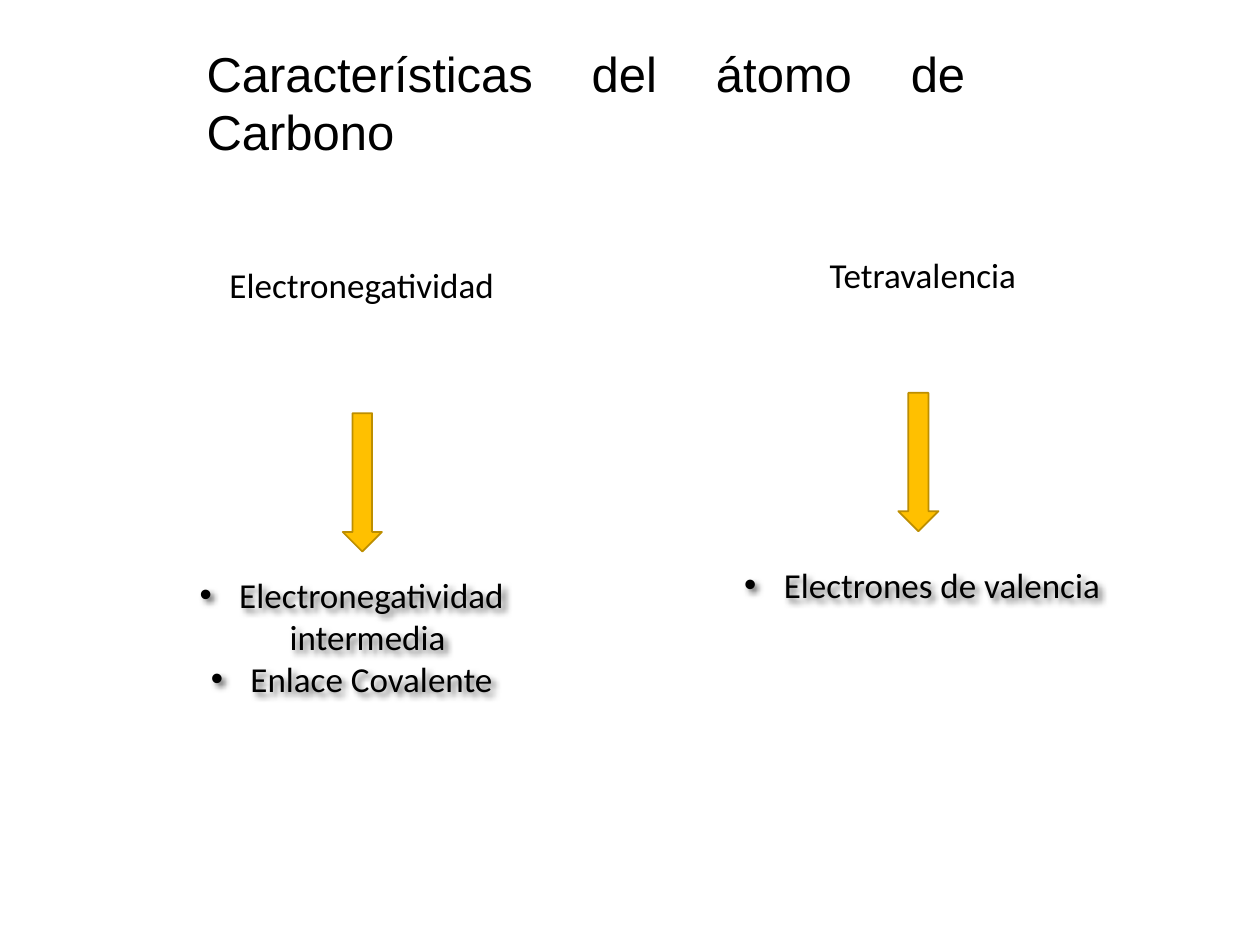
from lxml.etree import SubElement
from pptx import Presentation
from pptx.dml.color import RGBColor
from pptx.enum.shapes import MSO_SHAPE
from pptx.enum.text import MSO_ANCHOR, MSO_AUTO_SIZE, PP_ALIGN
from pptx.oxml.ns import qn
from pptx.util import Cm, Pt

COLORS = {"text": "000000", "outline": "FFFFFF", "arrow": "FFC000", "arrow_edge": "BD8E00"}

COLUMNS = [
    {
        "heading": ("Electronegatividad", (2.29, 3.94, 10.01, 3.61)),
        "arrow": (6.91, 8.33, 0.79, 2.79),
        "items": [" Electronegatividad intermedia", " Enlace Covalente"],
        "list": (2.39, 9.63, 9.4, 6.4),
        "bottom": 0.13,
    },
    {
        "heading": ("Tetravalencia", (14.3, 3.73, 8.61, 3.61)),
        "arrow": (18.11, 7.92, 0.81, 2.79),
        "items": [" Electrones de valencia"],
        "list": (13.89, 9.4, 9.4, 6.4),
        "bottom": 1.75,
    },
]


def color(name):
    return RGBColor.from_string(COLORS[name])


class SlideBuilder:
    heading_font = "Arial"
    body_font = "Calibri"
    body_size = 20

    def __init__(self, page):
        self.page = page

    def place(self, box, area):
        box.left, box.top, box.width, box.height = map(Cm, area)

    def set_text(self, box, lines, font, size, align, anchor):
        frame = box.text_frame
        frame.word_wrap = True
        frame.auto_size = MSO_AUTO_SIZE.NONE
        frame.vertical_anchor = anchor
        frame.text = "\n".join(lines)
        for para in frame.paragraphs:
            para.alignment = align
            para.space_before = Pt(0)
            para.font.name = font
            para.font.size = Pt(size)
            para.font.color.rgb = color("text")

    def title(self, text, area):
        box = self.page.shapes.title
        self.place(box, area)
        self.set_text(box, [text], self.heading_font, 28, PP_ALIGN.JUSTIFY, MSO_ANCHOR.TOP)

    def shape(self, kind, area, edge, width, fill=None):
        box = self.page.shapes.add_shape(kind, *map(Cm, area))
        box.shadow.inherit = False
        if fill:
            box.fill.solid()
            box.fill.fore_color.rgb = color(fill)
        else:
            box.fill.background()
        box.line.color.rgb = color(edge)
        box.line.width = Pt(width)
        return box

    def heading(self, text, area):
        box = self.shape(MSO_SHAPE.OVAL, area, "outline", 1.5)
        self.set_text(box, [text], self.body_font, self.body_size, PP_ALIGN.CENTER, MSO_ANCHOR.MIDDLE)

    def arrow(self, area):
        self.shape(MSO_SHAPE.DOWN_ARROW, area, "arrow_edge", 1, "arrow")

    def bullets(self, box, items, area, bottom):
        self.place(box, area)
        self.set_text(box, items, self.body_font, self.body_size, PP_ALIGN.CENTER, MSO_ANCHOR.MIDDLE)
        box.text_frame.margin_bottom = Cm(bottom)
        indent = Cm(0.64)
        for para in box.text_frame.paragraphs:
            properties = para._p.get_or_add_pPr()
            properties.set("marL", str(indent))
            properties.set("indent", str(-indent))
            SubElement(properties, qn("a:buFont"), typeface="Arial")
            SubElement(properties, qn("a:buChar"), char="•")
            properties.append(properties.find(qn("a:defRPr")))
        self.text_shadow(box)

    def text_shadow(self, box):
        box.fill.background()
        effects = SubElement(box._element.spPr, qn("a:effectLst"))
        shadow = SubElement(effects, qn("a:outerShdw"), blurRad="50800", dist="38100",
                            dir="2700000", algn="tl", rotWithShape="0")
        tint = SubElement(shadow, qn("a:srgbClr"), val=COLORS["text"])
        SubElement(tint, qn("a:alpha"), val="60000")


def main():
    deck = Presentation()
    deck.slide_width, deck.slide_height = Cm(25.4), Cm(19.05)
    page = deck.slides.add_slide(deck.slide_layouts[3])
    builder = SlideBuilder(page)
    builder.title("Características del átomo de Carbono", (3.91, 0.74, 15.8, 2.64))
    for number, column in enumerate(COLUMNS, start=1):
        builder.heading(*column["heading"])
        builder.arrow(column["arrow"])
        builder.bullets(page.placeholders[number], column["items"], column["list"], column["bottom"])
    deck.save("out.pptx")


if __name__ == "__main__":
    main()
